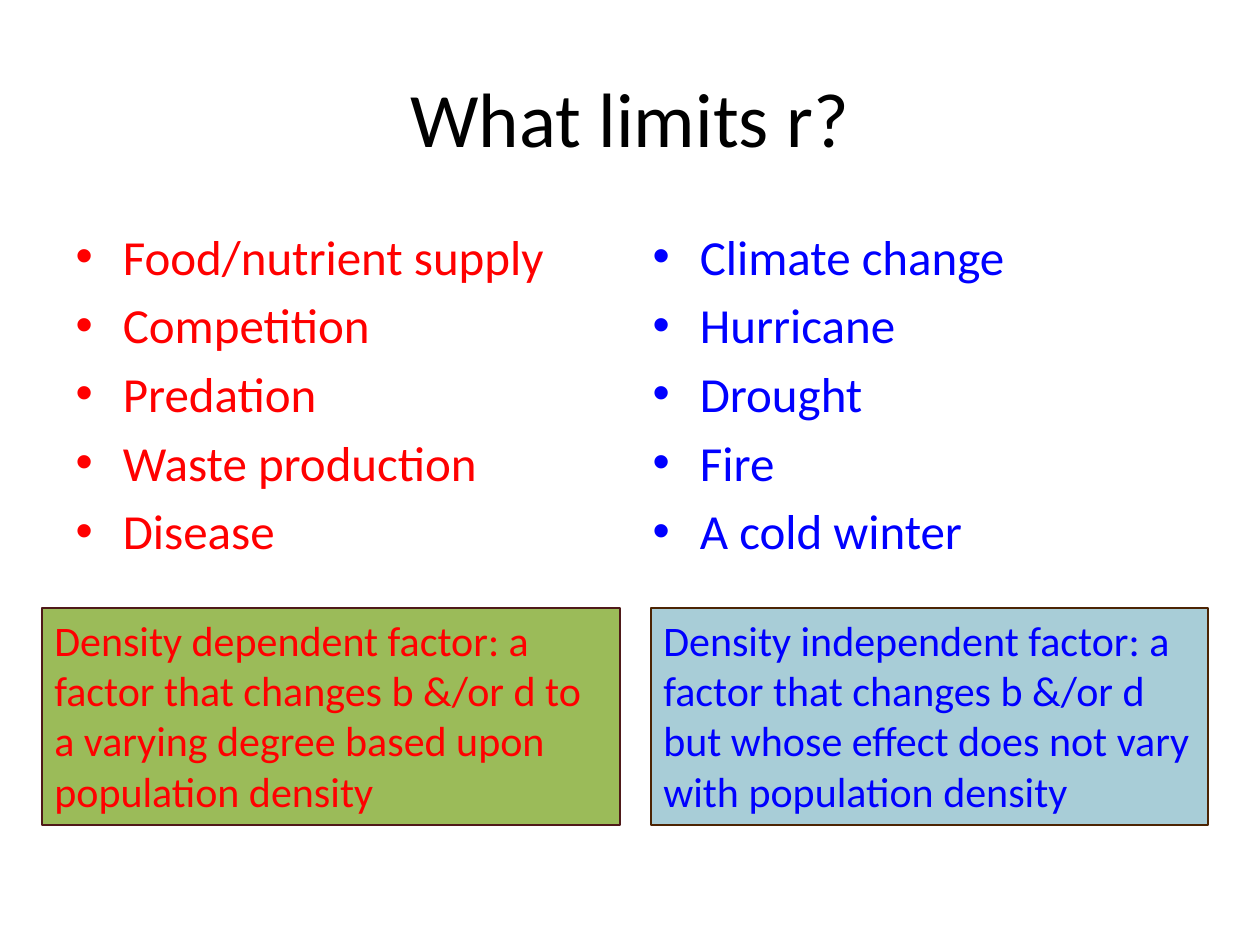
from pptx import Presentation
from pptx.dml.color import RGBColor
from pptx.enum import shapes, text
from pptx.util import Emu, Pt

BLACK = RGBColor(0x00, 0x00, 0x00)
RED = RGBColor(0xFF, 0x00, 0x00)
BLUE = RGBColor(0x00, 0x00, 0xFF)
GREEN = RGBColor(0x9B, 0xBB, 0x59)
SKY = RGBColor(0xA8, 0xCD, 0xD7)
MAROON = RGBColor(0x4F, 0x19, 0x19)
BROWN = RGBColor(0x4C, 0x24, 0x03)
SCALE = 914400 / 126


def px(n):
    return Emu(round(n * SCALE))


class Deck:
    """Holds the style and the current slide."""

    font = "Calibri"

    def __init__(self, wide, high):
        self.prs = Presentation()
        self.prs.slide_width, self.prs.slide_height = px(wide), px(high)
        self.slide = self.prs.slides.add_slide(self.prs.slide_layouts[3])

    def place(self, idx, at):
        item = self.slide.placeholders[idx]
        item.left, item.top, item.width, item.height = map(px, at)
        item.text_frame.auto_size = text.MSO_AUTO_SIZE.NONE
        return item.text_frame

    def run(self, para, words, size, color):
        run = para.add_run()
        run.text = words
        run.font.name, run.font.size = self.font, Pt(size)
        run.font.color.rgb = color

    def title(self, words, at):
        frame = self.place(0, at)
        frame.vertical_anchor = text.MSO_ANCHOR.MIDDLE
        para = frame.paragraphs[0]
        para.alignment = text.PP_ALIGN.CENTER
        self.run(para, words, 44, BLACK)

    def list(self, idx, items, at, color):
        frame = self.place(idx, at)
        for i, item in enumerate(items):
            para = frame.add_paragraph() if i else frame.paragraphs[0]
            self.run(para, item, 28, color)

    def box(self, words, at, color, fill, edge):
        box = self.slide.shapes.add_shape(shapes.MSO_SHAPE.RECTANGLE, *map(px, at))
        box.shadow.inherit = False
        box.fill.solid()
        box.fill.fore_color.rgb = fill
        box.line.color.rgb, box.line.width = edge, Pt(0.75)
        frame = box.text_frame
        frame.word_wrap = True
        frame.auto_size = text.MSO_AUTO_SIZE.SHAPE_TO_FIT_TEXT
        frame.vertical_anchor = text.MSO_ANCHOR.TOP
        para = frame.paragraphs[0]
        para.alignment = text.PP_ALIGN.LEFT
        self.run(para, words, 24, color)


def main():
    deck = Deck(1260, 945)
    deck.title("What limits r?", (63, 38, 1134, 157))
    deck.list(1, ["Food/nutrient supply", "Competition", "Predation",
                  "Waste production", "Disease"], (63, 220, 557, 624), RED)
    deck.list(2, ["Climate change", "Hurricane", "Drought", "Fire",
                  "A cold winter"], (640, 220, 557, 624), BLUE)
    deck.box("Density dependent factor: a factor that changes b &/or d to "
             "a varying degree based upon population density",
             (42, 608, 578, 217), RED, GREEN, MAROON)
    deck.box("Density independent factor: a factor that changes b &/or d "
             "but whose effect does not vary with population density",
             (651, 608, 557, 217), BLUE, SKY, BROWN)
    deck.prs.save("out.pptx")


if __name__ == "__main__":
    main()
